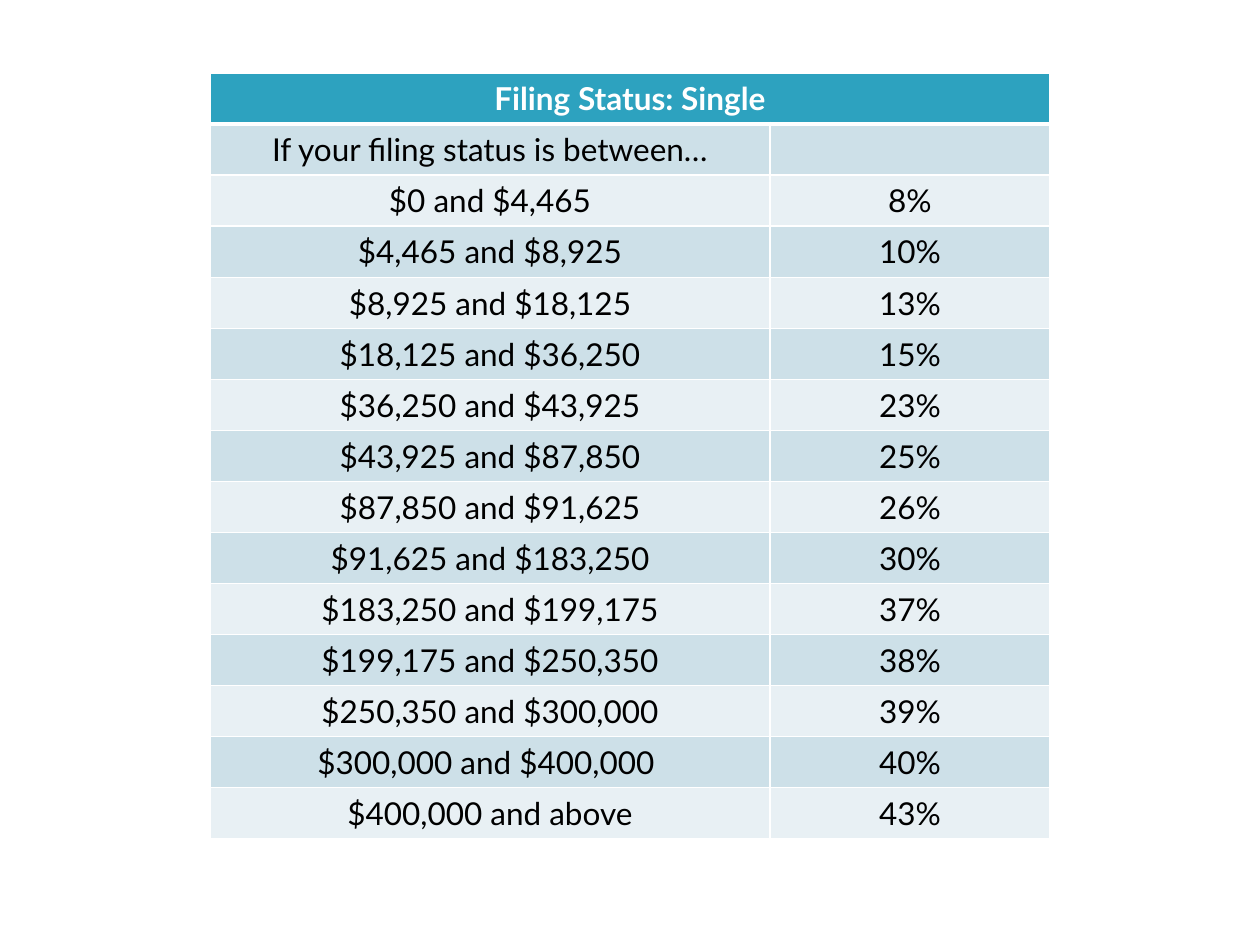
from dataclasses import dataclass

from lxml import etree
from pptx import Presentation
from pptx.dml.color import RGBColor
from pptx.enum.text import MSO_ANCHOR, PP_ALIGN
from pptx.oxml.ns import qn
from pptx.util import Pt

PX = 7257.14
CENTER = PP_ALIGN.CENTER
MIDDLE = MSO_ANCHOR.MIDDLE


@dataclass(frozen=True)
class Theme:
    font: str = "Lato"
    size: int = 18
    header: str = "2DA2BF"
    bands: tuple = ("E8F0F4", "CDE0E8")
    light: str = "FFFFFF"
    dark: str = "000000"
    border: int = 1
    header_rule: int = 3


THEME = Theme()

TITLE = "Filing Status: Single"
ROWS = [
    ("If your filing status is between…", ""),
    ("$0 and $4,465", "8%"),
    ("$4,465 and $8,925", "10%"),
    ("$8,925 and $18,125", "13%"),
    ("$18,125 and $36,250", "15%"),
    ("$36,250 and $43,925", "23%"),
    ("$43,925 and $87,850", "25%"),
    ("$87,850 and $91,625", "26%"),
    ("$91,625 and $183,250", "30%"),
    ("$183,250 and $199,175", "37%"),
    ("$199,175 and $250,350", "38%"),
    ("$250,350 and $300,000", "39%"),
    ("$300,000 and $400,000 ", "40%"),
    ("$400,000 and above", "43%"),
]


def px(n):
    return round(n * PX)


def set_borders(cell, **widths):
    tcPr = cell._tc.get_or_add_tcPr()
    for side in "LRTB":
        width = widths.get(side, THEME.border)
        ln = etree.SubElement(tcPr, qn(f"a:ln{side}"), w=str(Pt(width)))
        fill = etree.SubElement(ln, qn("a:solidFill"))
        etree.SubElement(fill, qn("a:srgbClr"), val=THEME.light)


def style_cell(cell, text, fill, color, bold=False, **widths):
    set_borders(cell, **widths)
    cell.fill.solid()
    cell.fill.fore_color.rgb = RGBColor.from_string(fill)
    cell.vertical_anchor = MIDDLE
    cell.text_frame.text = text
    p = cell.text_frame.paragraphs[0]
    p.alignment = CENTER
    for r in p.runs:
        r.font.name = THEME.font
        r.font.size = Pt(THEME.size)
        r.font.bold = bold
        r.font.color.rgb = RGBColor.from_string(color)


def add_rate_table(s, x, y, w, h):
    count = len(ROWS) + 1
    table = s.shapes.add_table(count, 2, px(x), px(y), px(w), px(h)).table
    for col, share in zip(table.columns, (2, 1)):
        col.width = px(w * share / 3)
    for row in table.rows:
        row.height = px(h / count)

    table.cell(0, 0).merge(table.cell(0, 1))
    for cell, text in zip(table.rows[0].cells, (TITLE, "")):
        style_cell(cell, text, THEME.header, THEME.light, True, B=THEME.header_rule)
    for i, values in enumerate(ROWS, 1):
        top = THEME.header_rule if i == 1 else THEME.border
        for cell, text in zip(table.rows[i].cells, values):
            style_cell(cell, text, THEME.bands[i % 2], THEME.dark, T=top)


def main():
    prs = Presentation()
    prs.slide_width, prs.slide_height = px(1260), px(945)
    s = prs.slides.add_slide(prs.slide_layouts[6])
    add_rate_table(s, 210, 73, 840, 766)
    prs.save("out.pptx")


if __name__ == "__main__":
    main()
